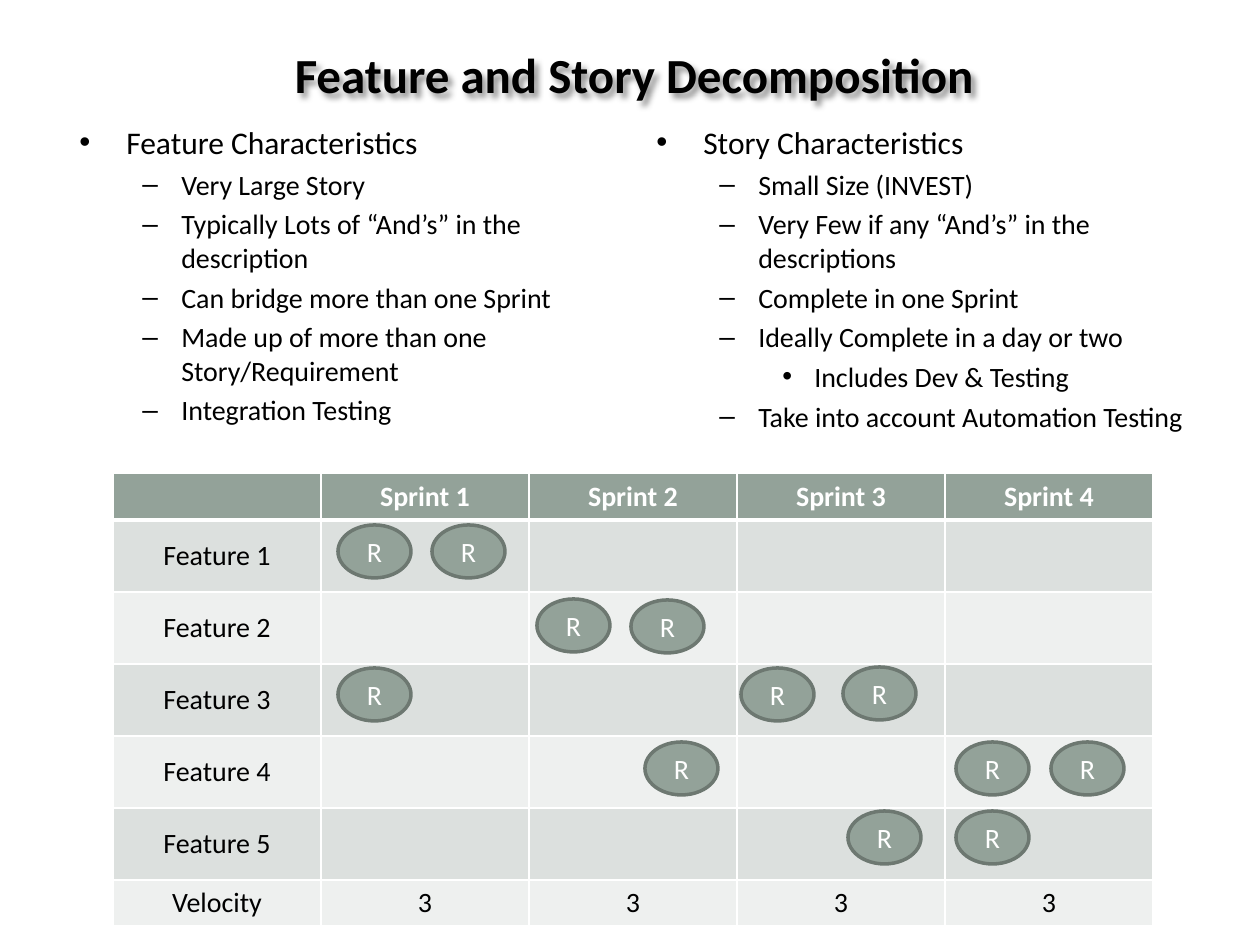
import pptx
import pptx.dml.color
import pptx.enum.shapes
import pptx.enum.text
import pptx.oxml
import pptx.oxml.ns
import pptx.util

PX = 914400 / 126
COLORS = {
    "text": "000000",
    "white": "FFFFFF",
    "sage": "93A299",
    "sage_dark": "6D7871",
    "band_dark": "DCE0DE",
    "band_light": "EEF0EF",
}
FONT = "Calibri"
NAMESPACE = pptx.oxml.ns.nsdecls("a")
CENTER = pptx.enum.text.PP_ALIGN.CENTER
MIDDLE = pptx.enum.text.MSO_ANCHOR.MIDDLE

# Per level: bullet, left margin px, hanging indent px, font size
LEVELS = [("•", 47, 47, 18), ("–", 102, 39, 16), ("•", 158, 32, 16)]

FEATURE_POINTS = [
    (0, "Feature Characteristics"),
    (1, "Very Large Story"),
    (1, "Typically Lots of “And’s” in the description"),
    (1, "Can bridge more than one Sprint"),
    (1, "Made up of more than one Story/Requirement"),
    (1, "Integration Testing"),
]
STORY_POINTS = [
    (0, "Story Characteristics"),
    (1, "Small Size (INVEST)"),
    (1, "Very Few if any “And’s” in the descriptions"),
    (1, "Complete in one Sprint"),
    (1, "Ideally Complete in a day or two"),
    (2, "Includes Dev & Testing"),
    (1, "Take into account Automation Testing"),
]
SPRINTS = 4
FEATURES = 5
PLAN = (
    [[""] + [f"Sprint {number + 1}" for number in range(SPRINTS)]]
    + [[f"Feature {number + 1}"] + [""] * SPRINTS for number in range(FEATURES)]
    + [["Velocity"] + ["3"] * SPRINTS]
)
ROW_HEIGHTS = [47] + [72] * FEATURES + [46]

# Requirement ovals as (left, top) px within the plan table
REQUIREMENTS = [
    (225, 52), (319, 52),
    (424, 126), (518, 127),
    (225, 195), (628, 195), (730, 194),
    (532, 269), (843, 269), (938, 269),
    (735, 338), (843, 338),
]


def emu(pixels):
    return pptx.util.Emu(round(pixels * PX))


def rgb(name):
    return pptx.dml.color.RGBColor.from_string(COLORS[name])


def format_runs(paragraph, size, color, bold=False):
    for run in paragraph.runs:
        run.font.name = FONT
        run.font.size = pptx.util.Pt(size)
        run.font.bold = bold
        run.font.color.rgb = rgb(color)


def add_text_box(slide, left, top, width, height):
    shape = slide.shapes.add_textbox(emu(left), emu(top), emu(width), emu(height))
    shape.text_frame.word_wrap = True
    return shape


def add_title(slide, left, top, width, height):
    shape = add_text_box(slide, left, top, width, height)
    shape.text_frame.vertical_anchor = MIDDLE
    shape.text_frame.text = "Feature and Story Decomposition"
    paragraph = shape.text_frame.paragraphs[0]
    paragraph.alignment = CENTER
    format_runs(paragraph, 28, "text", bold=True)
    shape._element.spPr.append(pptx.oxml.parse_xml(
        f'<a:effectLst {NAMESPACE}>'
        '<a:outerShdw blurRad="38100" dist="38100" dir="2700000" algn="tl">'
        f'<a:srgbClr val="{COLORS["text"]}"><a:alpha val="43000"/></a:srgbClr>'
        '</a:outerShdw></a:effectLst>'))


def add_bullet_list(slide, points, left, top, width, height):
    text_frame = add_text_box(slide, left, top, width, height).text_frame
    for index, (level, text) in enumerate(points):
        bullet, margin, hanging, size = LEVELS[level]
        paragraph = text_frame.add_paragraph() if index else text_frame.paragraphs[0]
        paragraph.text = text
        paragraph.level = level
        if index:
            paragraph.space_before = pptx.util.Pt(3.5)
        properties = paragraph._p.get_or_add_pPr()
        properties.set("marL", str(emu(margin)))
        properties.set("indent", str(emu(-hanging)))
        properties.append(pptx.oxml.parse_xml(
            f'<a:buFont {NAMESPACE} typeface="Arial"/>'))
        properties.append(pptx.oxml.parse_xml(
            f'<a:buChar {NAMESPACE} char="{bullet}"/>'))
        format_runs(paragraph, size, "text")


def set_cell_borders(cell, row_index):
    """Draw thin white borders, with a thick rule under the header row."""
    widths = {"L": 1, "R": 1, "T": 3 if row_index == 1 else 1,
              "B": 3 if row_index == 0 else 1}
    for side, points in widths.items():
        cell._tc.get_or_add_tcPr().append(pptx.oxml.parse_xml(
            f'<a:ln{side} {NAMESPACE} w="{pptx.util.Pt(points)}"><a:solidFill>'
            f'<a:srgbClr val="{COLORS["white"]}"/></a:solidFill></a:ln{side}>'))


def add_plan_table(slide, left, top, width):
    frame = slide.shapes.add_table(
        len(PLAN), SPRINTS + 1, emu(left), emu(top), emu(width), emu(sum(ROW_HEIGHTS)))
    table = frame.table
    for column in table.columns:
        column.width = emu(width / (SPRINTS + 1))
    for row_index, texts in enumerate(PLAN):
        table.rows[row_index].height = emu(ROW_HEIGHTS[row_index])
        header = row_index == 0
        band = "sage" if header else "band_dark" if row_index % 2 else "band_light"
        for column_index, text in enumerate(texts):
            cell = table.cell(row_index, column_index)
            set_cell_borders(cell, row_index)
            cell.fill.solid()
            cell.fill.fore_color.rgb = rgb(band)
            cell.margin_top = cell.margin_bottom = 0
            cell.vertical_anchor = MIDDLE
            cell.text_frame.text = text
            paragraph = cell.text_frame.paragraphs[0]
            paragraph.alignment = CENTER
            format_runs(paragraph, 16, "white" if header else "text", bold=header)


def add_requirement(slide, left, top, width, height):
    shape = slide.shapes.add_shape(
        pptx.enum.shapes.MSO_SHAPE.OVAL, emu(left), emu(top), emu(width), emu(height))
    shape.shadow.inherit = False
    shape.fill.solid()
    shape.fill.fore_color.rgb = rgb("sage")
    shape.line.color.rgb = rgb("sage_dark")
    shape.line.width = pptx.util.Pt(2)
    shape.text_frame.vertical_anchor = MIDDLE
    shape.text_frame.text = "R"
    paragraph = shape.text_frame.paragraphs[0]
    paragraph.alignment = CENTER
    format_runs(paragraph, 16, "white")


def add_sprint_plan(slide, left, top, width):
    add_plan_table(slide, left, top, width)
    for offset_left, offset_top in REQUIREMENTS:
        add_requirement(slide, left + offset_left, top + offset_top, 73, 53)


def main():
    presentation = pptx.Presentation()
    presentation.slide_width = emu(1260)
    presentation.slide_height = emu(945)
    slide = presentation.slides.add_slide(presentation.slide_layouts[6])
    add_title(slide, 67, 30, 1134, 88)
    add_bullet_list(slide, FEATURE_POINTS, 67, 117, 557, 378)
    add_bullet_list(slide, STORY_POINTS, 644, 117, 557, 378)
    add_sprint_plan(slide, 113, 473, 1040)
    presentation.save("out.pptx")


if __name__ == "__main__":
    main()
